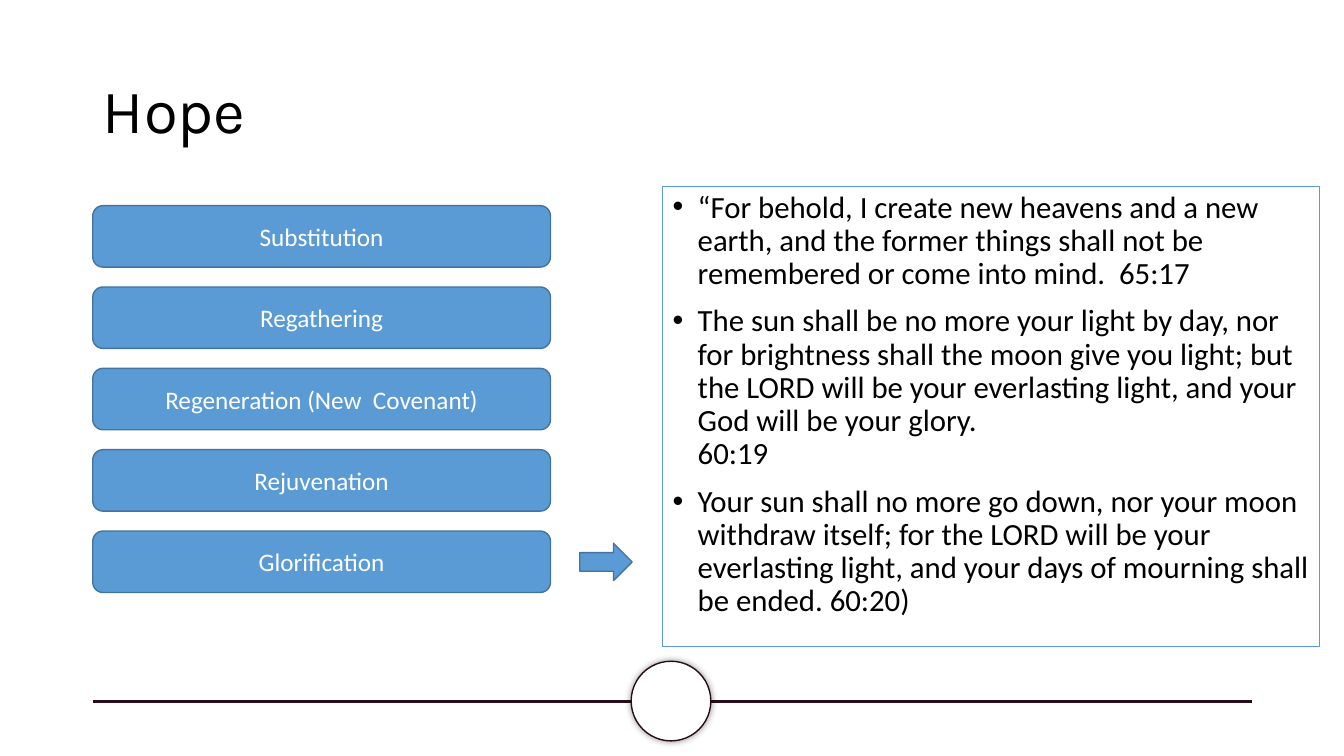
from lxml import etree
from pptx import Presentation
from pptx.dml.color import RGBColor
from pptx.enum.shapes import MSO_CONNECTOR, MSO_SHAPE
from pptx.enum.text import MSO_ANCHOR, MSO_AUTO_SIZE, PP_ALIGN
from pptx.oxml.ns import qn
from pptx.util import Inches, Pt

STRAIGHT = MSO_CONNECTOR.STRAIGHT
OVAL, ARROW, ROUND = MSO_SHAPE.OVAL, MSO_SHAPE.RIGHT_ARROW, MSO_SHAPE.ROUNDED_RECTANGLE
MIDDLE, TOP = MSO_ANCHOR.MIDDLE, MSO_ANCHOR.TOP
LEFT, CENTER = PP_ALIGN.LEFT, PP_ALIGN.CENTER
NO_FIT = MSO_AUTO_SIZE.NONE

BLACK = RGBColor(0x00, 0x00, 0x00)
WHITE = RGBColor(0xFF, 0xFF, 0xFF)
BLUE = RGBColor(0x5B, 0x9B, 0xD5)
NAVY = RGBColor(0x43, 0x73, 0x9E)
WINE = RGBColor(0x29, 0x0D, 0x15)

STEPS = ["Substitution", "Regathering", "Regeneration (New  Covenant)",
         "Rejuvenation", "Glorification"]
VERSES = [
    "“For behold, I create new heavens and a new earth, and the former things "
    "shall not be remembered or come into mind.  65:17",
    "The sun shall be no more your light by day, nor for brightness shall the "
    "moon give you light; but the LORD will be your everlasting light, and your "
    "God will be your glory.\n60:19",
    "Your sun shall no more go down, nor your moon withdraw itself; for the LORD "
    "will be your everlasting light, and your days of mourning shall be ended. 60:20)",
]


def place(shape, x, y, w, h):
    shape.left, shape.top = Inches(x), Inches(y)
    shape.width, shape.height = Inches(w), Inches(h)


def style(para, name, size, color, align):
    para.alignment = align
    para.font.name = name
    para.font.size = Pt(size)
    para.font.color.rgb = color


def add_block(slide, kind, box, fill, line):
    shape = slide.shapes.add_shape(kind, *map(Inches, box))
    shape.shadow.inherit = False
    shape.fill.solid()
    shape.fill.fore_color.rgb = fill
    shape.line.color.rgb = line
    shape.line.width = Pt(1)
    return shape


def add_step(slide, text, y):
    frame = add_block(slide, ROUND, (0.92, y, 4.54, 0.61), BLUE, NAVY).text_frame
    frame.vertical_anchor = MIDDLE
    frame.text = text
    style(frame.paragraphs[0], "Calibri", 18, WHITE, CENTER)


def add_glow(shape):
    effects = shape._element.spPr.find(qn("a:effectLst"))
    outer = etree.SubElement(effects, qn("a:outerShdw"), blurRad=str(Pt(5)),
                             dist="0", dir="0", algn="ctr", rotWithShape="0")
    color = etree.SubElement(outer, qn("a:srgbClr"), val=str(BLACK))
    etree.SubElement(color, qn("a:alpha"), val="40000")


def add_footer(slide):
    rule = slide.shapes.add_connector(
        STRAIGHT, Inches(0.92), Inches(6.96), Inches(12.42), Inches(6.96))
    rule.line.color.rgb = WINE
    rule.line.width = Pt(2.25)
    etree.SubElement(rule._element.spPr, qn("a:effectLst"))
    add_glow(add_block(slide, OVAL, (6.26, 6.56, 0.79, 0.79), WHITE, WINE))


def set_title(title, text):
    place(title, 0.92, 0.4, 11.5, 1.45)
    frame = title.text_frame
    frame.auto_size = NO_FIT
    frame.vertical_anchor = MIDDLE
    frame.text = text
    para = frame.paragraphs[0]
    para.line_spacing = 0.9
    style(para, "Karla", 44, BLACK, LEFT)


def add_bullet(para):
    props = para._p.get_or_add_pPr()
    props.set("marL", str(Inches(0.25)))
    props.set("indent", str(Inches(-0.25)))
    etree.SubElement(props, qn("a:buFont"), typeface="Arial")
    etree.SubElement(props, qn("a:buChar"), char="•")


def set_verses(body, verses):
    place(body, 6.57, 1.85, 6.52, 4.56)
    body.line.color.rgb = BLUE
    body.line.width = Pt(0.75)
    frame = body.text_frame
    frame.auto_size = NO_FIT
    frame.vertical_anchor = TOP
    for i, verse in enumerate(verses):
        para = frame.add_paragraph() if i else frame.paragraphs[0]
        para.text = verse.replace("\n", "\v")
        add_bullet(para)
        para.line_spacing = 0.9
        para.space_before = Pt(10 if i else 0)
        style(para, "Calibri", 22, BLACK, LEFT)


def main():
    deck = Presentation()
    deck.slide_width, deck.slide_height = Inches(13.33), Inches(7.5)
    slide = deck.slides.add_slide(deck.slide_layouts[1])
    add_footer(slide)
    set_title(slide.shapes.title, "Hope")
    set_verses(slide.placeholders[1], VERSES)
    for i, step in enumerate(STEPS):
        add_step(slide, step, 2.04 + 0.807 * i)
    add_block(slide, ARROW, (5.75, 5.39, 0.52, 0.37), BLUE, NAVY)
    deck.save("out.pptx")


if __name__ == "__main__":
    main()
